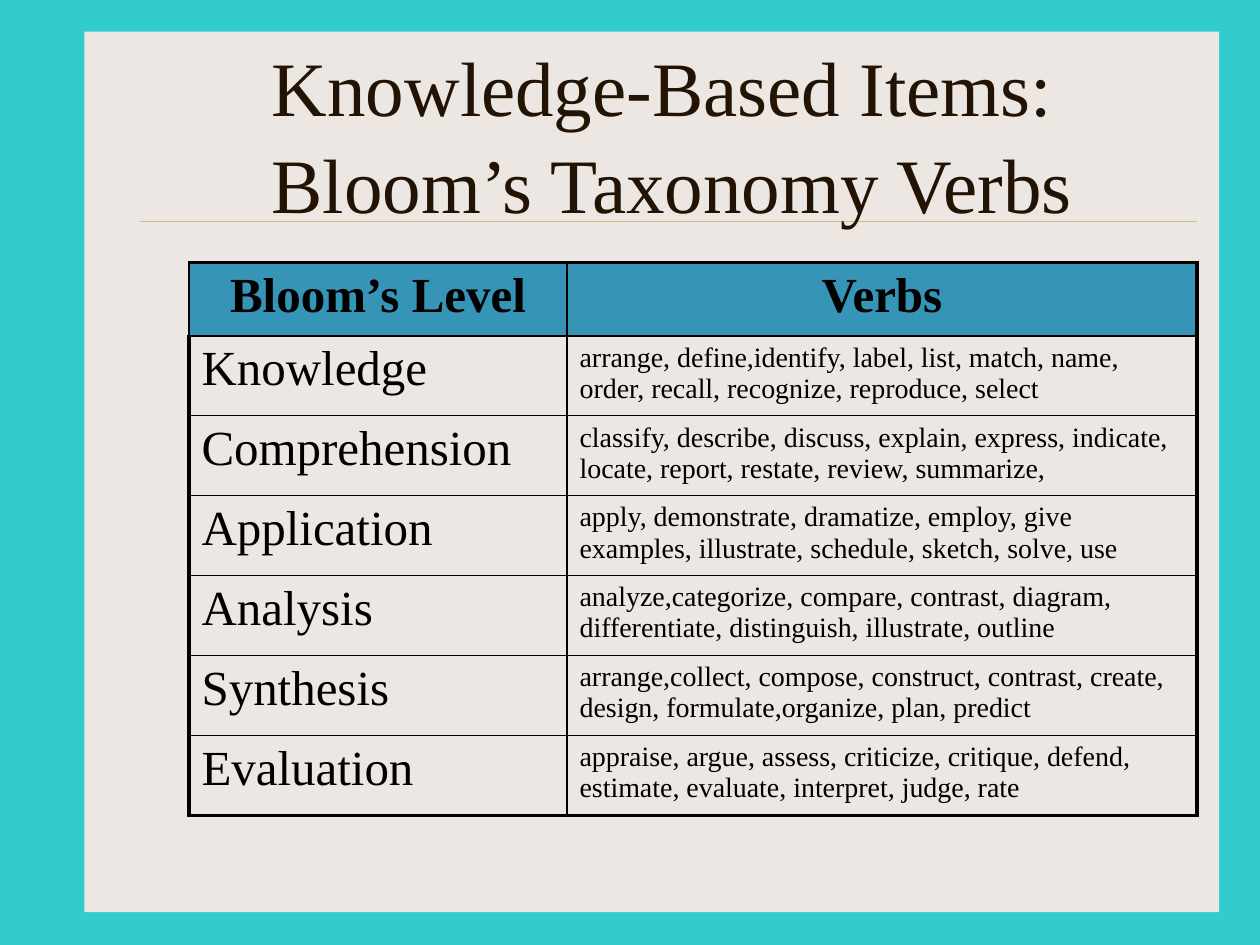
import pptx
import pptx.util
import pptx.dml.color
import pptx.enum.shapes
import pptx.enum.text
import pptx.oxml.ns
import lxml.etree

Cm, Pt = pptx.util.Cm, pptx.util.Pt
ALIGN = pptx.enum.text.PP_ALIGN
FONT = "Times New Roman"
HUES = {"back": "33CCCC", "panel": "EDE7E3", "rule": "CBBD83",
        "title": "221304", "head": "3694B6", "ink": "000000"}
ROWS = [
    ("Bloom’s Level", "Verbs"),
    ("Knowledge", "arrange, define,identify, label, list, match, name, order, recall, recognize, reproduce, select"),
    ("Comprehension", "classify, describe, discuss, explain, express, indicate, locate, report, restate, review, summarize,"),
    ("Application", "apply, demonstrate, dramatize, employ, give examples, illustrate, schedule, sketch, solve, use"),
    ("Analysis", "analyze,categorize, compare, contrast, diagram, differentiate, distinguish, illustrate, outline"),
    ("Synthesis", "arrange,collect, compose, construct, contrast, create, design, formulate,organize, plan, predict"),
    ("Evaluation", "appraise, argue, assess, criticize, critique, defend, estimate, evaluate, interpret, judge, rate"),
]


def hue(name):
    return pptx.dml.color.RGBColor.from_string(HUES[name])


def add_run(para, text, size, tint, bold=False):
    run = para.add_run()
    run.text = text
    run.font.name = FONT
    run.font.size = Pt(size)
    run.font.bold = bold
    run.font.color.rgb = hue(tint)


def add_edge(cell, side, width):
    props = cell._tc.get_or_add_tcPr()
    tag = pptx.oxml.ns.qn
    line = lxml.etree.SubElement(props, tag("a:ln" + side), w=str(Pt(width)))
    fill = lxml.etree.SubElement(line, tag("a:solidFill"))
    lxml.etree.SubElement(fill, tag("a:srgbClr"), val=HUES["ink"])


def draw_back(slide, left, top, width, height):
    fill = slide.background.fill
    fill.solid()
    fill.fore_color.rgb = hue("back")
    panel = slide.shapes.add_shape(
        pptx.enum.shapes.MSO_SHAPE.RECTANGLE, left, top, width, height)
    panel.shadow.inherit = False
    panel.fill.solid()
    panel.fill.fore_color.rgb = hue("panel")
    panel.line.fill.background()
    level = top + Cm(3.81)
    rule = slide.shapes.add_connector(
        pptx.enum.shapes.MSO_CONNECTOR.STRAIGHT,
        left + Cm(1.12), level, left + width - Cm(0.45), level)
    rule.line.color.rgb = hue("rule")
    rule.line.width = Pt(0.25)
    lxml.etree.SubElement(rule._element.spPr, pptx.oxml.ns.qn("a:effectLst"))


def draw_title(slide, left, top, width, height):
    frame = slide.shapes.add_textbox(left, top, width, height).text_frame
    frame.word_wrap = True
    frame.vertical_anchor = pptx.enum.text.MSO_ANCHOR.MIDDLE
    para = frame.paragraphs[0]
    para.alignment = ALIGN.CENTER
    para.line_spacing = 1.05
    add_run(para, "Knowledge-Based Items: ", 44, "title")
    para.add_line_break()
    add_run(para, "Bloom’s Taxonomy Verbs", 44, "title")


def draw_table(slide, left, top, width, height):
    table = slide.shapes.add_table(len(ROWS), 2, left, top, width, height).table
    table.first_row = table.horz_banding = False
    table.columns[0].width = int(width * 3 / 8)
    table.columns[1].width = int(width * 5 / 8)
    table.rows[0].height = Cm(1.48)
    last = len(ROWS) - 1
    for r, row in enumerate(ROWS):
        head = r == 0
        if not head:
            table.rows[r].height = int((height - Cm(1.48)) / last)
        for c, text in enumerate(row):
            cell = table.cell(r, c)
            thick = {"L": c == 0 and not head, "R": c == 1,
                     "T": head, "B": r == last}
            for side, wide in thick.items():
                add_edge(cell, side, 2.25 if wide else 1)
            if head:
                cell.fill.solid()
                cell.fill.fore_color.rgb = hue("head")
            else:
                cell.fill.background()
            para = cell.text_frame.paragraphs[0]
            para.alignment = ALIGN.CENTER if head else ALIGN.LEFT
            add_run(para, text, 28 if head or c == 0 else 16, "ink", head)


def main():
    deck = pptx.Presentation()
    deck.slide_width, deck.slide_height = Cm(25.4), Cm(19.05)
    slide = deck.slides.add_slide(deck.slide_layouts[6])
    draw_back(slide, Cm(1.7), Cm(0.64), Cm(22.88), Cm(17.75))
    draw_title(slide, Cm(2.97), Cm(1.07), Cm(21.16), Cm(3.18))
    draw_table(slide, Cm(3.81), Cm(5.29), Cm(20.32), Cm(11.15))
    deck.save("out.pptx")


if __name__ == "__main__":
    main()
